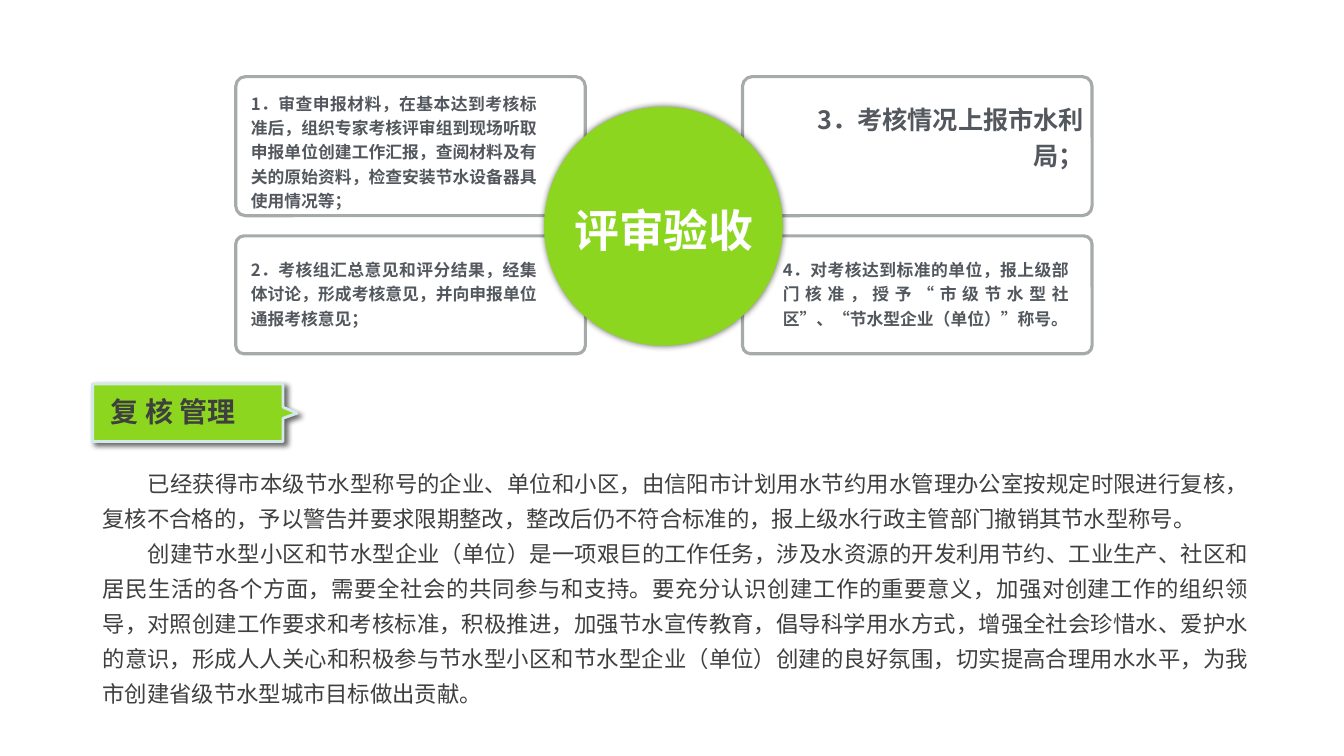
from lxml import etree
from pptx import Presentation
from pptx.dml.color import RGBColor
from pptx.enum import shapes, text
from pptx.oxml import ns
from pptx.util import Inches, Pt

COLOURS = {"green": "8CD620", "pale": "D3E8E8", "grey": "A6AAA9",
           "slate": "53585F", "dark": "3F3F3F", "white": "FFFFFF", "black": "000000"}
FONT = "Noto Sans CJK SC"
ALIGN = text.PP_ALIGN

prs = Presentation()
prs.slide_width, prs.slide_height = Inches(13.34), Inches(7.5)
slide = prs.slides.add_slide(prs.slide_layouts[6])


def add_shadow(shape, blur, distance, degrees):
    shape.shadow.inherit = False
    effects = shape._element.spPr.find(ns.qn("a:effectLst"))
    outer = etree.SubElement(effects, ns.qn("a:outerShdw"), blurRad=str(Pt(blur)),
                             dist=str(Pt(distance)), dir=str(degrees * 60000),
                             algn="ctr", rotWithShape="0")
    colour = etree.SubElement(outer, ns.qn("a:srgbClr"), val=COLOURS["black"])
    etree.SubElement(colour, ns.qn("a:alpha"), val="60000")


def add_text(box, paragraphs, size, colour, bold, align, inset=True,
             anchor=text.MSO_ANCHOR.TOP, spacing=1.0, indent=0):
    """Add a text box; box is left, top, width, height in inches."""
    frame = slide.shapes.add_textbox(*map(Inches, box)).text_frame
    frame.word_wrap = True
    frame.vertical_anchor = anchor
    if not inset:
        frame.margin_left = frame.margin_right = 0
        frame.margin_top = frame.margin_bottom = 0
    frame.text = "\n".join(paragraphs)
    for paragraph in frame.paragraphs:
        paragraph.alignment = align
        paragraph.line_spacing = spacing
        properties = paragraph._p.get_or_add_pPr()
        properties.set("hangingPunct", "0")
        properties.set("indent", str(Inches(indent)))
        for run in paragraph.runs:
            run.font.size, run.font.bold, run.font.name = Pt(size), bold, FONT
            run.font.color.rgb = RGBColor.from_string(COLOURS[colour])
            etree.SubElement(run._r.get_or_add_rPr(), ns.qn("a:ea"), typeface=FONT)


# Heading tag with a small pointer on its right side, in hundredths of an inch
outline = slide.shapes.build_freeform(92, 381, scale=Inches(0.01))
outline.add_line_segments([(281, 381), (281, 404), (295, 410), (281, 415),
                           (281, 438), (92, 438)], close=True)
heading_tag = outline.convert_to_shape()
heading_tag.fill.solid()
heading_tag.fill.fore_color.rgb = RGBColor.from_string(COLOURS["green"])
heading_tag.line.color.rgb = RGBColor.from_string(COLOURS["pale"])
heading_tag.line.width = Pt(2)
add_shadow(heading_tag, 4, 3, 45)

# Four step frames around the centre circle
for left in (2.34, 7.37):
    for top, height in ((0.76, 1.38), (2.34, 1.17)):
        step_frame = slide.shapes.add_shape(
            shapes.MSO_SHAPE.ROUNDED_RECTANGLE,
            Inches(left), Inches(top), Inches(3.47), Inches(height))
        step_frame.adjustments[0] = 0.07
        step_frame.shadow.inherit = False
        step_frame.fill.background()
        step_frame.line.color.rgb = RGBColor.from_string(COLOURS["grey"])
        step_frame.line.width = Pt(2.25)

review_circle = slide.shapes.add_shape(
    shapes.MSO_SHAPE.OVAL, Inches(5.4), Inches(1.06), Inches(2.37), Inches(2.37))
review_circle.fill.solid()
review_circle.fill.fore_color.rgb = RGBColor.from_string(COLOURS["green"])
review_circle.line.fill.background()
add_shadow(review_circle, 5, 0, 0)

steps = [
    ((2.49, 0.89, 2.84, 1.02), 12, ALIGN.JUSTIFY,
     "1．审查申报材料，在基本达到考核标准后，组织专家考核评审组到现场听取申报单位创建工作汇报，"
     "查阅材料及有关的原始资料，检查安装节水设备器具使用情况等；"),
    ((2.49, 2.54, 2.84, 1), 12, ALIGN.JUSTIFY,
     "2．考核组汇总意见和评分结果，经集体讨论，形成考核意见，并向申报单位通报考核意见；"),
    ((7.69, 0.97, 3.07, 0.62), 18, ALIGN.RIGHT, "3．考核情况上报市水利局；"),
    ((7.77, 2.54, 2.84, 0.84), 12, ALIGN.JUSTIFY,
     "4．对考核达到标准的单位，报上级部门核准，授予“市级节水型社区”、“节水型企业（单位）”称号。"),
]
for box, size, align, wording in steps:
    add_text(box, [wording], size, "slate", True, align, inset=False, spacing=1.2)

add_text((5.49, 2.02, 2.2, 0.52), ["评审验收"], 32, "white", True, ALIGN.CENTER,
         inset=False, anchor=text.MSO_ANCHOR.MIDDLE)

management = [
    "已经获得市本级节水型称号的企业、单位和小区，由信阳市计划用水节约用水管理办公室按规定时限进行复核，"
    "复核不合格的，予以警告并要求限期整改，整改后仍不符合标准的，报上级水行政主管部门撤销其节水型称号。",
    "创建节水型小区和节水型企业（单位）是一项艰巨的工作任务，涉及水资源的开发利用节约、工业生产、"
    "社区和居民生活的各个方面，需要全社会的共同参与和支持。要充分认识创建工作的重要意义，"
    "加强对创建工作的组织领导，对照创建工作要求和考核标准，积极推进，加强节水宣传教育，"
    "倡导科学用水方式，增强全社会珍惜水、爱护水的意识，形成人人关心和积极参与节水型小区和"
    "节水型企业（单位）创建的良好氛围，切实提高合理用水水平，为我市创建省级节水型城市目标做出贡献。",
]
add_text((0.92, 4.52, 11.58, 2.56), management, 16, "dark", False, ALIGN.JUSTIFY,
         anchor=text.MSO_ANCHOR.MIDDLE, spacing=Pt(25), indent=0.45)
add_text((1, 3.86, 1.65, 0.44), ["复 核 管理"], 20, "dark", True, ALIGN.LEFT)

prs.save("out.pptx")
